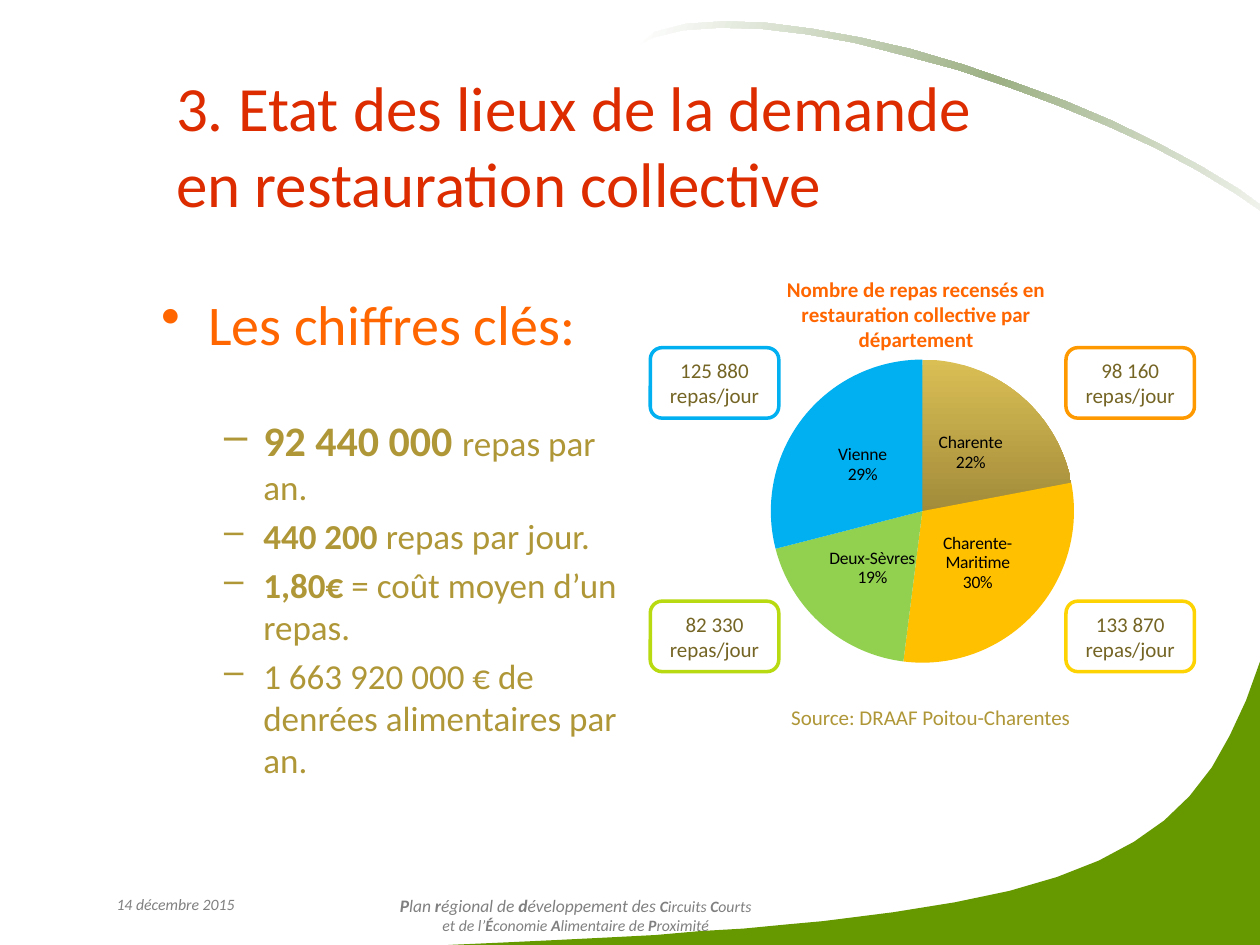
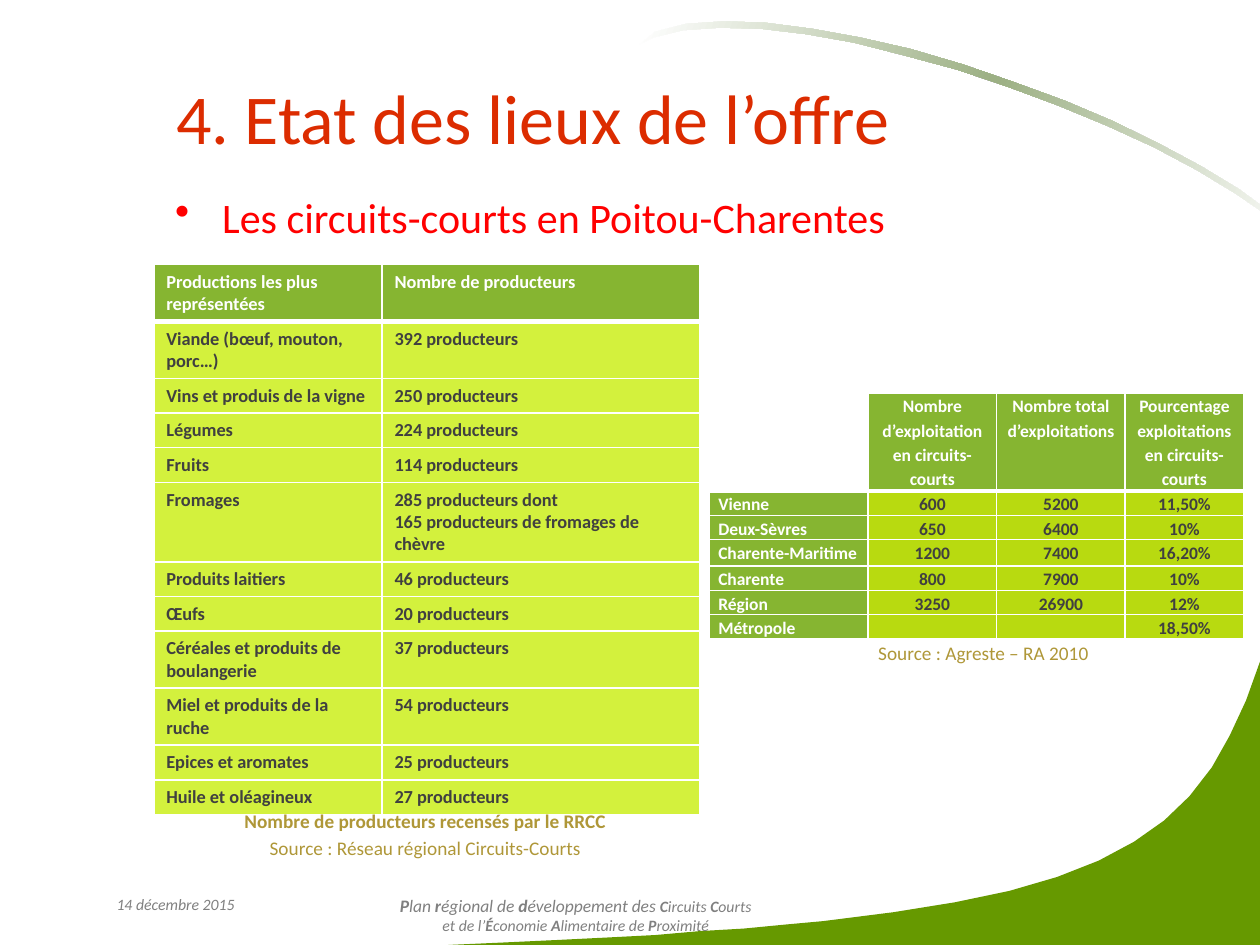
import copy

import lxml.etree
import pptx
import pptx.chart.data
import pptx.dml.color
import pptx.enum.chart
import pptx.enum.shapes
import pptx.enum.text
import pptx.oxml.ns
import pptx.util

Cm, Pt = pptx.util.Cm, pptx.util.Pt
qn = pptx.oxml.ns.qn
ALIGN = pptx.enum.text.PP_ALIGN
ANCHOR = pptx.enum.text.MSO_ANCHOR
FONT = "Calibri"
COLORS = {
    "title": "DC2C00", "orange": "FF6600", "red": "FF0000", "ochre": "AF9738",
    "brown": "756525", "grey": "808080", "dark": "404040", "white": "FFFFFF",
    "black": "000000", "hill": "669900", "sage": "9CB084", "head": "86B531",
    "lime": "B8DA10", "pale": "D3F13D", "blue": "00B0F0", "amber": "FF9900",
    "yellow": "FDD303", "gold": "FFC000", "green": "92D050",
    "sand": "DABF55", "khaki": "A28B3A",
}
HILL = [
    (25.4, 13.34), (25.4, 19.05), (9.04, 19.05), (10.16, 19), (11.23, 18.95),
    (12.24, 18.9), (13.21, 18.85), (14.12, 18.77), (14.99, 18.72), (15.82, 18.64),
    (16.59, 18.57), (18.01, 18.39), (19.25, 18.19), (20.35, 17.96), (21.31, 17.68),
    (22.15, 17.35), (22.86, 16.97), (23.47, 16.54), (23.98, 16.05), (24.43, 15.47),
    (24.79, 14.83), (25.12, 14.12),
]
ARC = [
    (12.9, 0.89), (13.21, 0.64), (13.84, 0.48), (14.61, 0.43), (15.44, 0.46),
    (16.36, 0.58), (17.35, 0.76), (18.36, 0.99), (19.41, 1.3), (20.42, 1.65),
    (21.46, 2.03), (22.43, 2.44), (23.37, 2.9), (24.21, 3.35), (24.97, 3.81),
    (25.6, 4.27), (26.31, 4.95), (26.29, 5), (25.55, 4.34), (24.89, 3.89),
    (24.13, 3.43), (23.27, 2.97), (22.33, 2.54), (21.34, 2.13), (20.32, 1.75),
    (19.28, 1.4), (18.24, 1.12), (17.22, 0.86), (16.26, 0.69), (15.34, 0.58),
    (14.5, 0.56), (13.77, 0.61), (13.16, 0.76),
]
CROPS = [
    ("Productions les plus représentées", "Nombre de producteurs"),
    ("Viande (bœuf, mouton, porc…)", "392 producteurs"),
    ("Vins et produis de la vigne", "250 producteurs"),
    ("Légumes", "224 producteurs"),
    ("Fruits", "114 producteurs"),
    ("Fromages", "285 producteurs dont\n165 producteurs de fromages de chèvre"),
    ("Produits laitiers", "46 producteurs"),
    ("Œufs", "20 producteurs"),
    ("Céréales et produits de boulangerie", "37 producteurs"),
    ("Miel et produits de la ruche", "54 producteurs"),
    ("Epices et aromates", "25 producteurs"),
    ("Huile et oléagineux", "27 producteurs"),
]
LINES = [2, 2, 1, 1, 1, 3, 1, 1, 2, 2, 1, 1]
FARMS = [
    ("", "Nombre d’exploitation en circuits-courts", "Nombre total d’exploitations",
     "Pourcentage exploitations en circuits-courts"),
    ("Vienne", "600", "5200", "11,50%"),
    ("Deux-Sèvres", "650", "6400", "10%"),
    ("Charente-Maritime", "1200", "7400", "16,20%"),
    ("Charente", "800", "7900", "10%"),
    ("Région", "3250", "26900", "12%"),
    ("Métropole", "", "", "18,50%"),
]


def rgb(name):
    """Look up a colour by name."""
    return pptx.dml.color.RGBColor.from_string(COLORS[name])


def style(font, size, color, bold=False, italic=False):
    """Set the look of a font."""
    font.name, font.size = FONT, Pt(size)
    font.bold, font.italic = bold, italic
    font.color.rgb = rgb(color)


def write(par, text, size, color, bold=False, italic=False):
    """Add runs to a paragraph; asterisks switch bold on and off."""
    for part in text.split("*"):
        if part:
            run = par.add_run()
            run.text = part
            style(run.font, size, color, bold, italic)
        bold = not bold


def line(frame, align=None, space=None, gap=0):
    """Give the next free paragraph of a text frame."""
    par = frame.paragraphs[0]
    if par.runs:
        par = frame.add_paragraph()
        par.space_before = Pt(gap)
    par.alignment = align
    if space:
        par.line_spacing = space
    return par


def bullet(par, sign, left, hang, level=0):
    """Put a hanging bullet before a paragraph."""
    par.level = level
    props = par._p.get_or_add_pPr()
    props.set("marL", str(Cm(left)))
    props.set("indent", str(-Cm(hang)))
    lxml.etree.SubElement(props, qn("a:buChar")).set("char", sign)


def box(slide, left, top, width, height, anchor=ANCHOR.TOP):
    """Add a wrapping text box and return its frame."""
    shape = slide.shapes.add_textbox(Cm(left), Cm(top), Cm(width), Cm(height))
    frame = shape.text_frame
    frame.word_wrap = True
    frame.vertical_anchor = anchor
    return frame


def outline(slide, points):
    """Draw a closed outline from points in centimetres."""
    dots = [(round(x * 100), round(y * 100)) for x, y in points]
    build = slide.shapes.build_freeform(*dots[0], scale=Cm(0.01))
    build.add_line_segments(dots[1:], close=True)
    shape = build.convert_to_shape()
    shape.shadow.inherit = False
    shape.line.fill.background()
    return shape


def blend(fill, angle, names):
    """Fill with evenly spaced gradient stops."""
    fill.gradient()
    fill.gradient_angle = angle
    stops = fill.gradient_stops
    for name, stop in zip((names[0], names[-1]), stops):
        stop.color.rgb = rgb(name)


def backdrop(slide):
    """Draw the green hill and the fading arc."""
    hill = outline(slide, HILL)
    hill.fill.solid()
    hill.fill.fore_color.rgb = rgb("hill")
    arc = outline(slide, ARC)
    blend(arc.fill, 338, ("white", "white"))
    stops = next(arc._element.iter(qn("a:gsLst")))
    stops.insert(1, copy.deepcopy(stops[0]))
    mid = arc.fill.gradient_stops[1]
    mid.position = 0.5
    mid.color.rgb = rgb("sage")


def footer(slide):
    """Write the date and the name of the plan."""
    date = box(slide, 1.98, 17.91, 3.12, 1.02)
    write(line(date, ALIGN.CENTER), "14 décembre 2015", 9, "grey", italic=True)
    plan = box(slide, 5.51, 17.91, 12.19, 1.02)
    par = line(plan, ALIGN.CENTER)
    write(par, "*P*lan *r*égional de *d*éveloppement des ", 10, "grey", italic=True)
    write(par, "*C*ircuits *C*ourts", 9, "grey", italic=True)
    write(line(plan, ALIGN.CENTER),
          "et de l’*É*conomie *A*limentaire de *P*roximité", 9, "grey", italic=True)


def start(deck, title, top, width, size):
    """Add a slide with backdrop, footer and title."""
    slide = deck.slides.add_slide(deck.slide_layouts[6])
    backdrop(slide)
    footer(slide)
    frame = box(slide, 3.3, top, width, 3.18, ANCHOR.MIDDLE)
    write(line(frame), title, size, "title")
    return slide


def place(node, index, **spots):
    """Set a manual layout on a chart part."""
    for old in node.findall(qn("c:layout")):
        node.remove(old)
    layout = lxml.etree.Element(qn("c:layout"))
    manual = lxml.etree.SubElement(layout, qn("c:manualLayout"))
    for key, value in spots.items():
        lxml.etree.SubElement(manual, qn("c:" + key)).set("val", str(value))
    node.insert(index, layout)


def pie(slide):
    """Draw the pie of meals by department."""
    data = pptx.chart.data.CategoryChartData()
    data.categories = ["Charente", "Charente-Maritime", "Deux-Sèvres", "Vienne"]
    data.add_series("Repas", (22, 30, 19, 29))
    chart = slide.shapes.add_chart(
        pptx.enum.chart.XL_CHART_TYPE.PIE,
        Cm(14.3), Cm(5.05), Cm(8.26), Cm(8.41), data).chart
    style(chart.font, 10, "black")
    chart.has_legend = False
    par = chart.chart_title.text_frame.paragraphs[0]
    rows = ("Nombre de repas recensés en", "restauration collective par", "département")
    for row in rows:
        if par.runs:
            par.add_line_break()
        write(par, row, 12, "orange", bold=True)
    place(chart.chart_title._element, 1, xMode="edge", yMode="edge", x=0.18, y=0.05)
    place(next(chart._chartSpace.iter(qn("c:plotArea"))), 0, layoutTarget="inner",
          xMode="edge", yMode="edge", x=0.15, y=0.26, w=0.74, h=0.73)
    plot = chart.plots[0]
    plot.vary_by_categories = True
    points = plot.series[0].points
    blend(points[0].format.fill, 270, ("sand", "khaki"))
    for index, name in enumerate(("gold", "green", "blue"), 1):
        fill = points[index].format.fill
        fill.solid()
        fill.fore_color.rgb = rgb(name)
    plot.has_data_labels = True
    labels = plot.data_labels
    labels.show_value = False
    labels.show_category_name = labels.show_percentage = True
    labels.number_format, labels.number_format_is_linked = "0%", False
    labels.position = pptx.enum.chart.XL_LABEL_POSITION.CENTER
    style(labels.font, 10, "black")
    mark = lxml.etree.Element(qn("c:separator"))
    mark.text = "\n"
    labels._element.find(qn("c:showBubbleSize")).addnext(mark)


def badge(slide, left, top, text, color):
    """Draw a rounded box with a daily count."""
    shape = slide.shapes.add_shape(
        pptx.enum.shapes.MSO_SHAPE.ROUNDED_RECTANGLE,
        Cm(left), Cm(top), Cm(2.59), Cm(1.42))
    shape.shadow.inherit = False
    shape.fill.solid()
    shape.fill.fore_color.rgb = rgb("white")
    shape.line.color.rgb, shape.line.width = rgb(color), Pt(2)
    write(line(shape.text_frame, ALIGN.CENTER), text, 12, "brown")


def border(cell, row):
    """Draw white cell borders, thick below the header."""
    props = cell._tc.get_or_add_tcPr()
    for side in "LRTB":
        thick = (row, side) in ((0, "B"), (1, "T"))
        edge = lxml.etree.SubElement(props, qn("a:ln" + side))
        edge.set("w", str(Pt(3 if thick else 1)))
        fill = lxml.etree.SubElement(edge, qn("a:solidFill"))
        lxml.etree.SubElement(fill, qn("a:srgbClr")).set("val", COLORS["white"])


def grid(slide, left, top, cols, tall, rows, size, body, tight=False):
    """Add a table; a tight one has centred values and a head column."""
    table = slide.shapes.add_table(
        len(rows), len(cols), Cm(left), Cm(top), Cm(sum(cols)), Cm(sum(tall))).table
    for col, width in zip(table.columns, cols):
        col.width = Cm(width)
    for r, row in enumerate(rows):
        table.rows[r].height = Cm(tall[r])
        for c, text in enumerate(row):
            cell = table.cell(r, c)
            border(cell, r)
            head = r == 0 or (tight and c == 0)
            blank = r == 0 and not text
            cell.fill.solid()
            cell.fill.fore_color.rgb = rgb("white" if blank else "head" if head else body)
            if tight:
                cell.margin_left = cell.margin_right = Cm(0.18)
                cell.margin_top = cell.margin_bottom = 0
            for part in text.split("\n"):
                par = line(cell.text_frame, ALIGN.CENTER if tight and c else ALIGN.LEFT,
                           1.15 if tight else None)
                write(par, part, size, "white" if head else "dark", bold=True)
                if not part:
                    par._p.get_or_add_endParaRPr().set("sz", str(size * 100))


def demand(deck):
    """Build the slide on demand."""
    slide = start(deck, "3. Etat des lieux de la demande en restauration collective",
                  1.32, 16.61, 36)
    pie(slide)
    for left, top, text, color in (
            (21.49, 7.01, "98 160 repas/jour", "amber"),
            (21.49, 12.12, "133 870 repas/jour", "yellow"),
            (13.11, 7.01, "125 880 repas/jour", "blue"),
            (13.11, 12.12, "82 330 repas/jour", "lime")):
        badge(slide, left, top, text, color)
    frame = box(slide, 3, 5.72, 9.75, 11.99)
    par = line(frame)
    bullet(par, "•", 0.95, 0.95)
    write(par, "Les chiffres clés:", 32, "orange")
    for gap, big, text in (
            (33, "*92 440 000 ", "repas par an."),
            (4, "", "*440 200* repas par jour."),
            (4, "", "*1,80€* = coût moyen d’un repas."),
            (4, "", "1 663 920 000 € de denrées alimentaires par an.")):
        par = line(frame, gap=gap)
        bullet(par, "–", 2.06, 0.79, 1)
        write(par, big, 24, "ochre")
        write(par, text, 20, "ochre")
    frame = box(slide, 15.7, 14.07, 6.2, 0.76)
    write(line(frame), "Source: DRAAF Poitou-Charentes", 12, "ochre")


def supply(deck):
    """Build the slide on supply."""
    slide = start(deck, "4. Etat des lieux de l’offre", 0.76, 21.46, 40)
    par = line(box(slide, 3.28, 3.73, 21.46, 12.57))
    bullet(par, "•", 0.95, 0.95)
    write(par, "Les circuits-courts en Poitou-Charentes", 24, "red")
    grid(slide, 14.3, 7.92, (3.2, 2.59, 2.59, 2.39),
         [1.98, 0.49, 0.49, 0.53, 0.49, 0.49, 0.49], FARMS, 10, "lime", tight=True)
    grid(slide, 3.1, 5.33, (4.6, 6.4), [0.25 + 0.45 * n for n in LINES],
         CROPS, 10.5, "pale")
    frame = box(slide, 14.91, 12.73, 9.83, 0.79)
    write(line(frame, ALIGN.CENTER, 1.15), "Source : Agreste – RA 2010", 11, "ochre")
    frame = box(slide, 3.66, 16.13, 9.83, 0.79)
    for text in ("*Nombre de producteurs recensés par le RRCC",
                 "Source : Réseau régional Circuits-Courts"):
        write(line(frame, ALIGN.CENTER, 1.15), text, 11, "ochre")


def main():
    """Build and save the deck."""
    deck = pptx.Presentation()
    deck.slide_width, deck.slide_height = Cm(25.4), Cm(19.05)
    demand(deck)
    supply(deck)
    deck.save("out.pptx")


if __name__ == "__main__":
    main()
